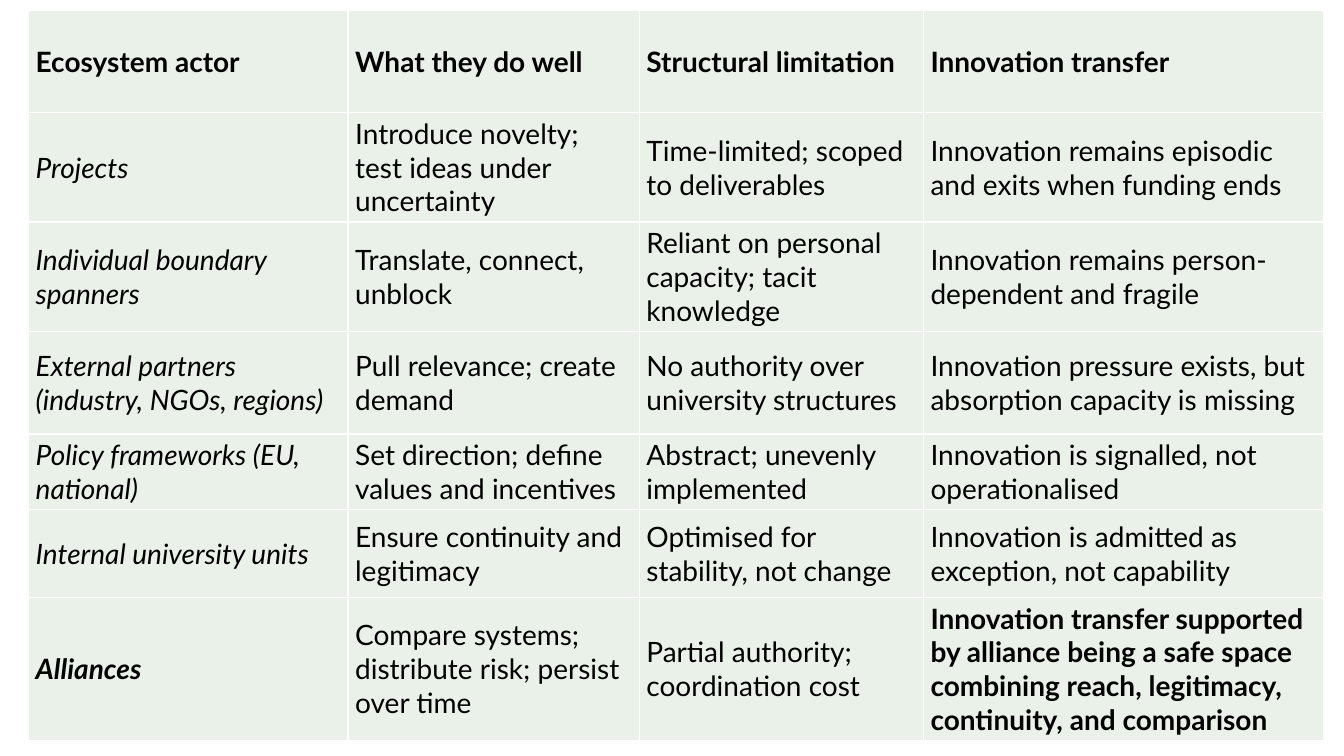
from lxml import etree
from pptx import Presentation
from pptx import util as u
from pptx.dml.color import RGBColor
from pptx.enum import text
from pptx.oxml import ns

PALE_GREEN = RGBColor(0xE9, 0xF1, 0xE8)
BLACK = RGBColor(0, 0, 0)
WHITE = RGBColor(0xFF, 0xFF, 0xFF)
FONT = "Lato"

COLUMN_WIDTHS = [8.05, 7.34, 7.16, 10.08]
ROW_HEIGHTS = [2.59, 2.59, 2.59, 2.59, 1.78, 2.21, 3.4]
ACTORS = [
    ["Ecosystem actor", "What they do well", "Structural limitation", "Innovation transfer"],
    ["Projects", "Introduce novelty; test ideas under uncertainty",
     "Time-limited; scoped to deliverables",
     "Innovation remains episodic and exits when funding ends"],
    ["Individual boundary spanners", "Translate, connect, unblock",
     "Reliant on personal capacity; tacit knowledge",
     "Innovation remains person-dependent and fragile"],
    ["External partners (industry, NGOs, regions)", "Pull relevance; create demand",
     "No authority over university structures",
     "Innovation pressure exists, but absorption capacity is missing"],
    ["Policy frameworks (EU, national)", "Set direction; define values and incentives",
     "Abstract; unevenly implemented",
     "Innovation is signalled, not operationalised"],
    ["Internal university units", "Ensure continuity and legitimacy",
     "Optimised for stability, not change",
     "Innovation is admitted as exception, not capability"],
    ["Alliances", "Compare systems; distribute risk; persist over time",
     "Partial authority; coordination cost",
     "Innovation transfer supported by alliance being a safe space combining reach, "
     "legitimacy, continuity, and comparison"],
]


def add_borders(cell, color, width):
    tc_pr = cell._tc.get_or_add_tcPr()
    for side in ("lnL", "lnR", "lnT", "lnB"):
        ln = etree.SubElement(tc_pr, ns.qn(f"a:{side}"), w=str(width))
        fill = etree.SubElement(ln, ns.qn("a:solidFill"))
        etree.SubElement(fill, ns.qn("a:srgbClr"), val=str(color))


def fill_cell(cell, wording, bold, italic):
    add_borders(cell, WHITE, u.Pt(1))
    cell.fill.solid()
    cell.fill.fore_color.rgb = PALE_GREEN
    cell.vertical_anchor = text.MSO_ANCHOR.MIDDLE
    cell.margin_left = cell.margin_right = u.Cm(0.18)
    cell.margin_top = cell.margin_bottom = u.Cm(0.1)
    r = cell.text_frame.paragraphs[0].add_run()
    r.text = wording
    r.font.name = FONT
    r.font.size = u.Pt(20)
    r.font.color.rgb = BLACK
    r.font.bold = bold
    r.font.italic = italic


def add_actor_table(s, left, top, width, height):
    table = s.shapes.add_table(len(ACTORS), len(COLUMN_WIDTHS),
                               left, top, width, height).table
    table.horz_banding = False
    for column, size in zip(table.columns, COLUMN_WIDTHS):
        column.width = u.Cm(size)
    for row, size in zip(table.rows, ROW_HEIGHTS):
        row.height = u.Cm(size)
    last = len(ACTORS) - 1
    for i, wordings in enumerate(ACTORS):
        for j, wording in enumerate(wordings):
            bold = i == 0 or (i == last and j in (0, 3))
            fill_cell(table.cell(i, j), wording, bold, italic=i > 0 and j == 0)


def main():
    prs = Presentation()
    prs.slide_width, prs.slide_height = u.Cm(33.87), u.Cm(19.05)
    s = prs.slides.add_slide(prs.slide_layouts[6])
    add_actor_table(s, u.Cm(0.72), u.Cm(0.25),
                    u.Cm(sum(COLUMN_WIDTHS)), u.Cm(sum(ROW_HEIGHTS)))
    prs.save("out.pptx")


if __name__ == "__main__":
    main()
